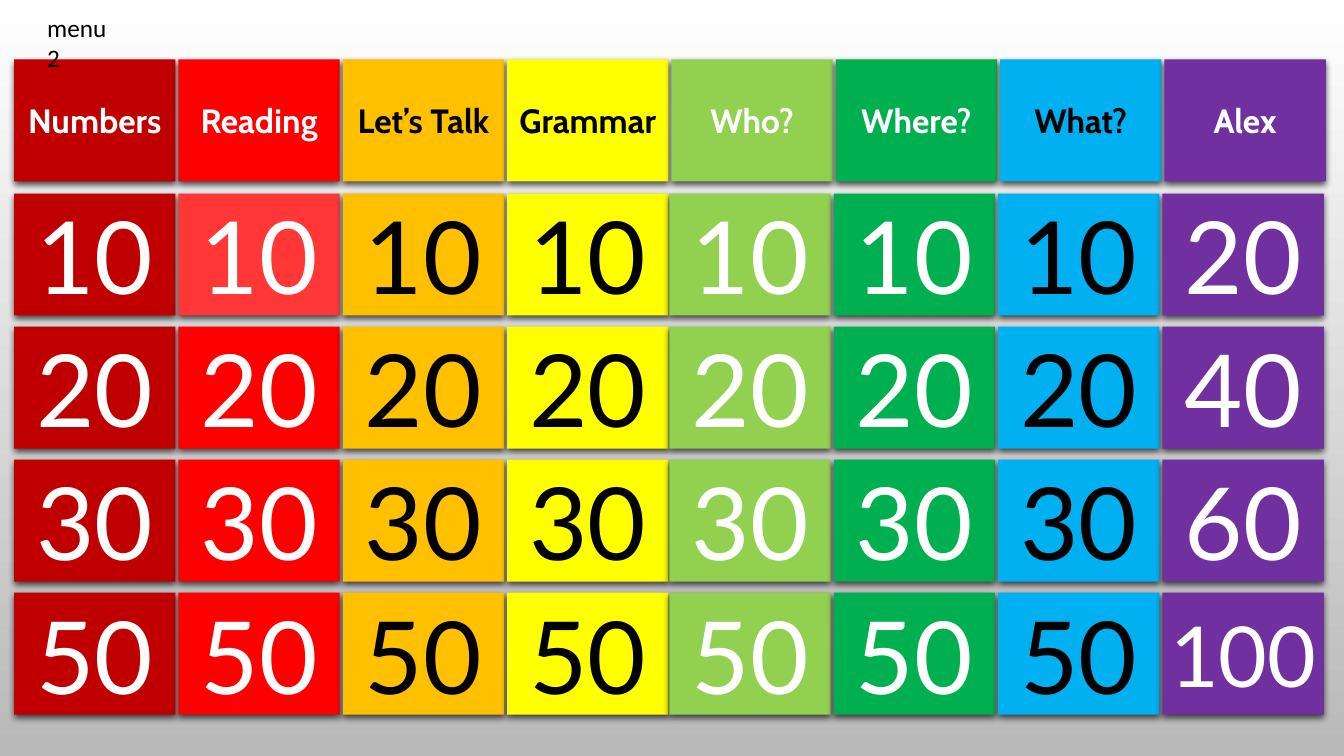
from dataclasses import dataclass

import lxml.etree
import pptx
import pptx.dml.color
import pptx.enum.shapes
import pptx.enum.text
import pptx.oxml.ns
import pptx.presentation
import pptx.slide
import pptx.util

RGBColor = pptx.dml.color.RGBColor

EMU_PER_PX = 9144  # 100 px to the inch

WHITE = RGBColor(0xFF, 0xFF, 0xFF)
BLACK = RGBColor(0x00, 0x00, 0x00)
GREY = RGBColor(0xB9, 0xB9, 0xB9)
DARK_RED = RGBColor(0xC0, 0x00, 0x00)
RED = RGBColor(0xFF, 0x00, 0x00)
LIGHT_RED = RGBColor(0xFF, 0x37, 0x37)
ORANGE = RGBColor(0xFF, 0xC0, 0x00)
YELLOW = RGBColor(0xFF, 0xFF, 0x00)
LIGHT_GREEN = RGBColor(0x92, 0xD0, 0x50)
GREEN = RGBColor(0x00, 0xB0, 0x50)
BLUE = RGBColor(0x00, 0xB0, 0xF0)
PURPLE = RGBColor(0x70, 0x30, 0xA0)

SLIDE_WIDTH, SLIDE_HEIGHT = 1333, 750
TILE_WIDTH, TILE_HEIGHT = 160, 121
BOARD_LEFT, COLUMN_PITCH = 14, 163
HEADER_TOP, SCORES_TOP, ROW_PITCH = 59, 192, 132
# The scores of the right half sit slightly left of their headers
SHIFTED_FROM, SCORE_SHIFT = 4, 2

HEADER_SIZE, SCORE_SIZE, LONG_SCORE_SIZE = 24, 72, 60


@dataclass(frozen=True)
class Category:
    name: str
    fill: RGBColor
    text_color: RGBColor
    scores: tuple[int, ...] = (10, 20, 30, 50)
    first_score_fill: RGBColor | None = None


CATEGORIES = (
    Category("Numbers", DARK_RED, WHITE),
    Category("Reading", RED, WHITE, first_score_fill=LIGHT_RED),
    Category("Let’s Talk", ORANGE, BLACK),
    Category("Grammar", YELLOW, BLACK),
    Category("Who?", LIGHT_GREEN, WHITE),
    Category("Where?", GREEN, WHITE),
    Category("What?", BLUE, BLACK),
    Category("Alex", PURPLE, WHITE, scores=(20, 40, 60, 100)),
)


@dataclass(frozen=True)
class Tile:
    left: int
    top: int
    text: str
    fill: RGBColor
    text_color: RGBColor
    font_name: str
    size: int
    bold: bool = False


def px(length: int) -> pptx.util.Emu:
    return pptx.util.Emu(length * EMU_PER_PX)


def add_shadow(shape) -> None:
    """Give the shape a soft shadow straight below it."""
    shape.shadow.inherit = False
    qn = pptx.oxml.ns.qn
    effects = shape.element.spPr.find(qn("a:effectLst"))
    shadow = lxml.etree.SubElement(
        effects, qn("a:outerShdw"), blurRad="63500", dist="25400",
        dir="5400000", algn="ctr", rotWithShape="0")
    color = lxml.etree.SubElement(shadow, qn("a:srgbClr"), val=str(BLACK))
    lxml.etree.SubElement(color, qn("a:alpha"), val="69000")


def add_tile(slide: pptx.slide.Slide, tile: Tile) -> None:
    shape = slide.shapes.add_shape(
        pptx.enum.shapes.MSO_SHAPE.RECTANGLE,
        px(tile.left), px(tile.top), px(TILE_WIDTH), px(TILE_HEIGHT))
    shape.fill.solid()
    shape.fill.fore_color.rgb = tile.fill
    shape.line.fill.background()
    add_shadow(shape)

    frame = shape.text_frame
    frame.margin_left = frame.margin_right = 0
    frame.margin_top = frame.margin_bottom = 0
    frame.word_wrap = True
    frame.vertical_anchor = pptx.enum.text.MSO_ANCHOR.MIDDLE
    frame.text = tile.text
    paragraph = frame.paragraphs[0]
    paragraph.alignment = pptx.enum.text.PP_ALIGN.CENTER
    font = paragraph.runs[0].font
    font.name = tile.font_name
    font.size = pptx.util.Pt(tile.size)
    font.bold = tile.bold
    font.color.rgb = tile.text_color


def add_header(slide: pptx.slide.Slide, column: int, category: Category) -> None:
    add_tile(slide, Tile(
        BOARD_LEFT + column * COLUMN_PITCH, HEADER_TOP, category.name,
        category.fill, category.text_color, "Cabin", HEADER_SIZE, bold=True))


def add_scores(slide: pptx.slide.Slide, column: int, category: Category) -> None:
    left = BOARD_LEFT + column * COLUMN_PITCH
    if column >= SHIFTED_FROM:
        left -= SCORE_SHIFT
    for row, score in enumerate(category.scores):
        fill = category.fill
        if row == 0 and category.first_score_fill is not None:
            fill = category.first_score_fill
        size = SCORE_SIZE if score < 100 else LONG_SCORE_SIZE
        add_tile(slide, Tile(
            left, SCORES_TOP + row * ROW_PITCH, str(score),
            fill, category.text_color, "Lato", size))


def add_title(slide: pptx.slide.Slide) -> None:
    title = slide.shapes.add_textbox(px(37), px(7), px(86), px(40))
    title.text_frame.word_wrap = True
    title.text_frame.text = "menu2"
    font = title.text_frame.paragraphs[0].runs[0].font
    font.name = "Calibri"
    font.size = pptx.util.Pt(18)
    font.color.rgb = BLACK


def set_background(slide: pptx.slide.Slide) -> None:
    fill = slide.background.fill
    fill.gradient()
    fill.gradient_angle = 270
    for stop, position, color in zip(fill.gradient_stops, (0, 1), (WHITE, GREY)):
        stop.position = position
        stop.color.rgb = color


def main() -> None:
    presentation = pptx.Presentation()
    presentation.slide_width = px(SLIDE_WIDTH)
    presentation.slide_height = px(SLIDE_HEIGHT)
    slide = presentation.slides.add_slide(presentation.slide_layouts[6])
    set_background(slide)

    # Game board: category headers, then the scores below them
    for column, category in enumerate(CATEGORIES):
        add_header(slide, column, category)
    for column, category in enumerate(CATEGORIES):
        add_scores(slide, column, category)

    # Slide name, in front of the board
    add_title(slide)
    presentation.save("out.pptx")


if __name__ == "__main__":
    main()
